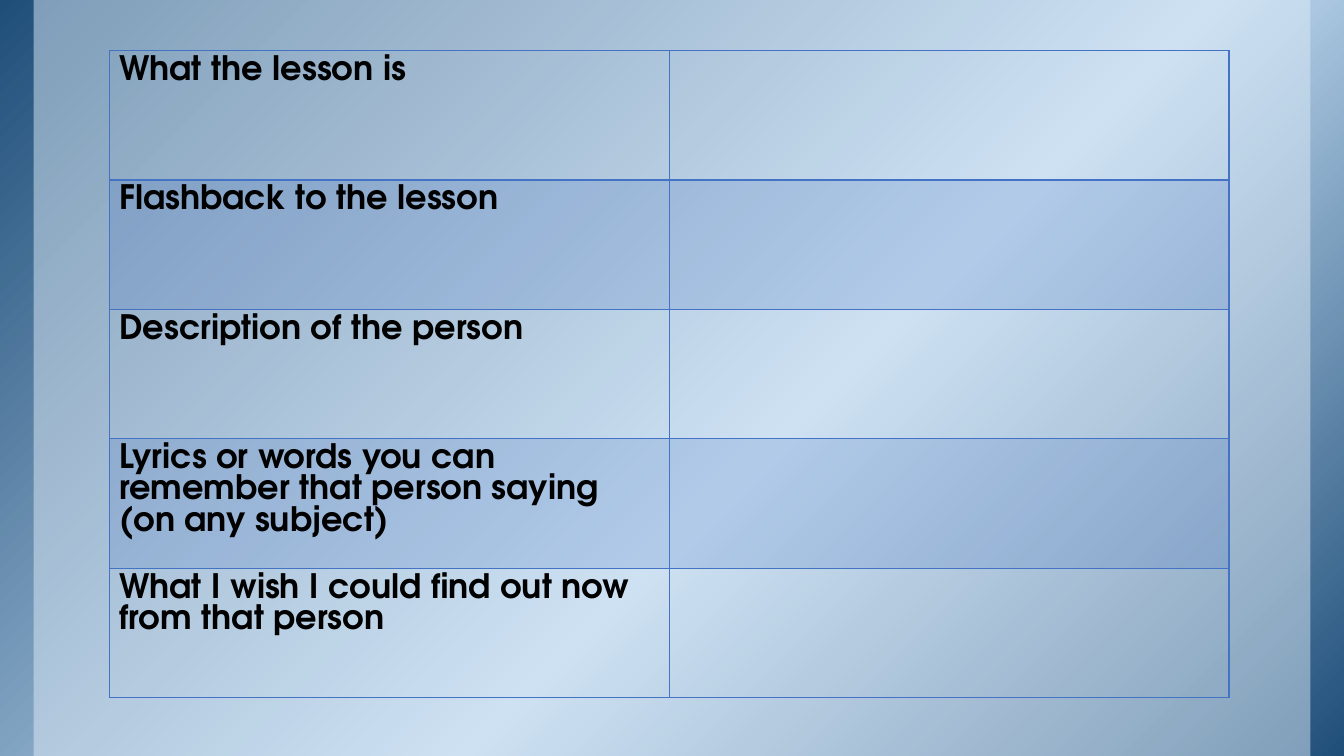
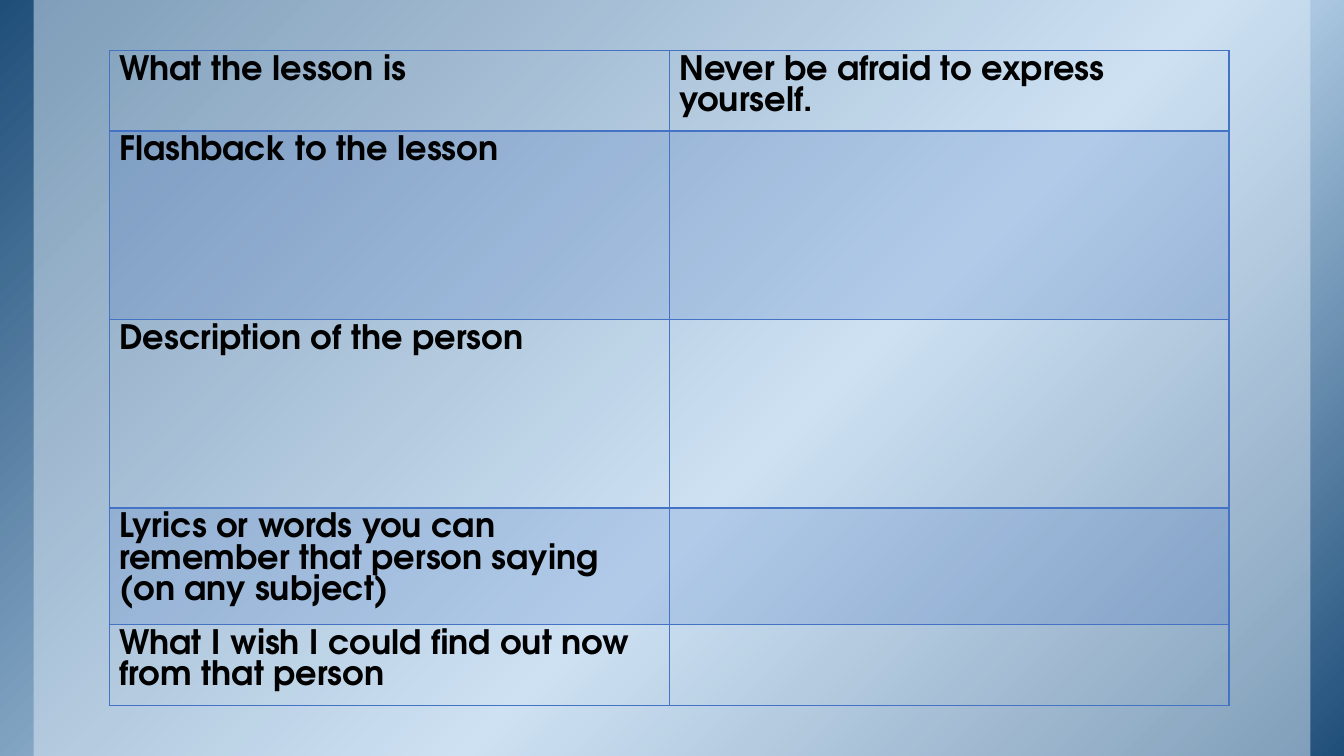
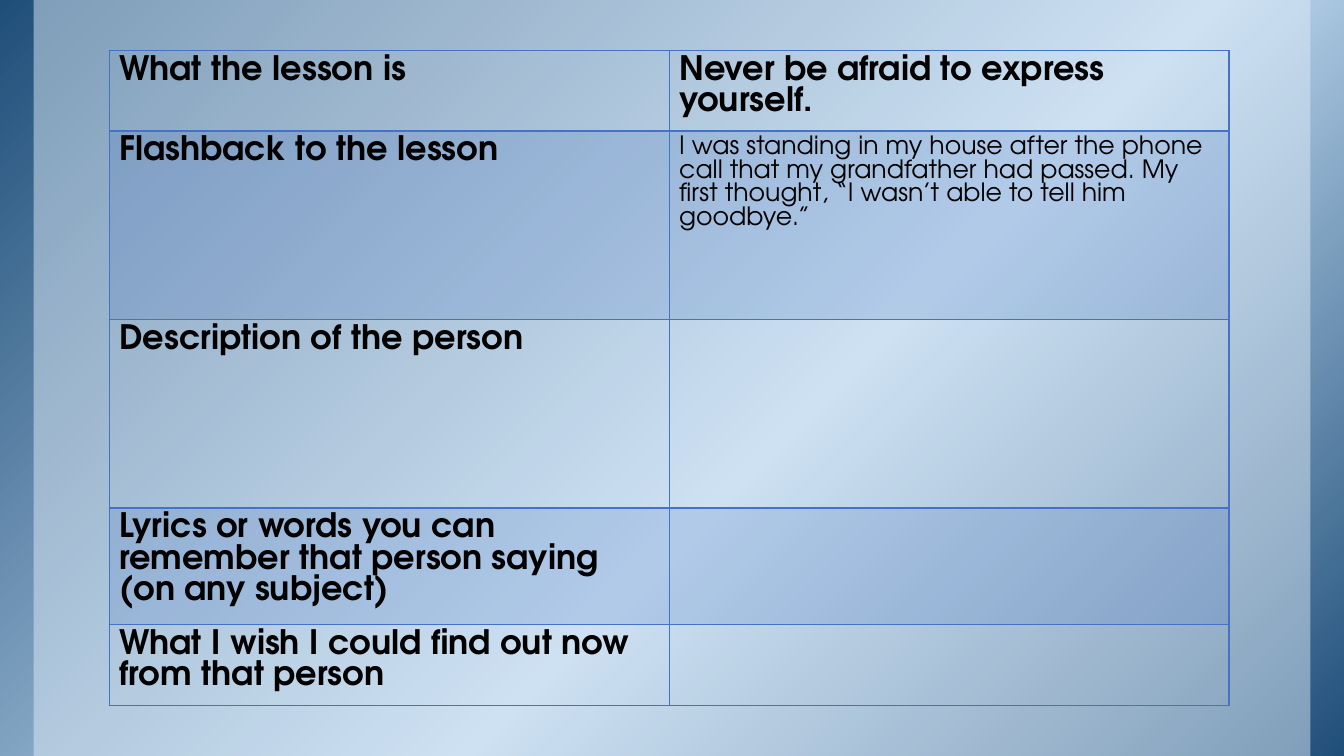
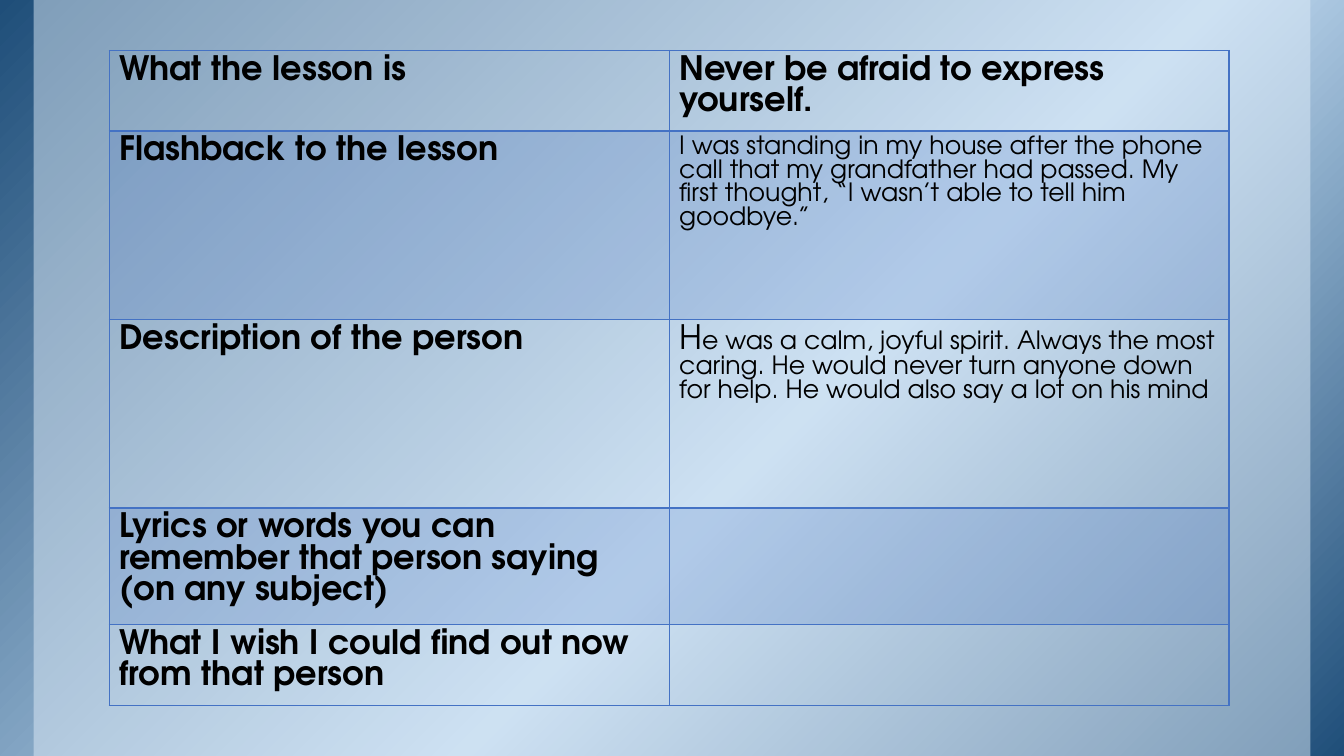
from copy import deepcopy
from dataclasses import dataclass

from lxml.etree import SubElement as Sub
from pptx import Presentation
from pptx.dml.color import RGBColor as Rgb
from pptx.enum.shapes import MSO_SHAPE as Shape
from pptx.oxml.ns import qn
from pptx.util import Inches, Pt


@dataclass(frozen=True)
class Theme:
    font: str = "TeX Gyre Adventor"
    head: int = 24
    body: int = 18
    ink: str = "000000"
    deep: str = "1F4E79"
    sky: str = "BDD7EE"
    pale: str = "DEEBF7"
    line: str = "4472C4"
    thin: int = 1
    thick: int = 2
    veil: int = 50   # opacity of the centre panel, percent
    tint: int = 20   # opacity of the shaded rows, percent


class Deck:
    """Holds the theme and the current slide; lengths are grid columns and rows."""
    COLS, ROWS = 40, 15

    def __init__(self, theme):
        self.theme = theme
        self.prs = Presentation()
        self.prs.slide_width = Inches(13.333)
        self.prs.slide_height = Inches(7.5)
        self.blank = self.prs.slide_layouts[6]
        self.slide = None

    def x(self, cols):
        return round(self.prs.slide_width * cols / self.COLS)

    def y(self, rows):
        return round(self.prs.slide_height * rows / self.ROWS)

    def page(self):
        self.slide = self.prs.slides.add_slide(self.blank)

    # Fills
    def wash(self, fill, color, alpha):
        fill.solid()
        fill.fore_color.rgb = Rgb.from_string(color)
        node = fill._xPr.find(qn("a:solidFill"))[0]
        Sub(node, qn("a:alpha"), val=str(alpha * 1000))

    def blend(self, fill, stops, angle):
        fill.gradient()
        fill.gradient_angle = 360 - angle
        nodes = fill._xPr.find(qn("a:gradFill")).find(qn("a:gsLst"))
        while len(nodes) < len(stops):
            nodes.append(deepcopy(nodes[0]))
        for stop, (place, color) in zip(fill.gradient_stops, stops):
            stop.position = place
            stop.color.rgb = Rgb.from_string(color)

    # Shapes
    def rect(self, left, top, width, height):
        box = self.slide.shapes.add_shape(
            Shape.RECTANGLE, self.x(left), self.y(top), self.x(width), self.y(height))
        box.shadow.inherit = False
        box.line.fill.background()
        return box

    def share(self, *boxes):
        """Move shapes to the blank layout, so that every slide shows them."""
        for box in boxes:
            self.blank.shapes._spTree.append(box._element)

    def frame(self):
        t = self.theme
        back = self.rect(0, 0, self.COLS, self.ROWS)
        self.blend(back.fill, [(0, t.deep), (0.58, t.sky), (1, t.deep)], 45)
        panel = self.rect(1, 0, self.COLS - 2, self.ROWS)
        self.wash(panel.fill, t.pale, t.veil)
        self.share(back, panel)

    # Table
    def edge(self, cell, side, width):
        props = cell._tc.get_or_add_tcPr()
        line = Sub(props, qn(f"a:ln{side}"), w=str(Pt(width)))
        Sub(Sub(line, qn("a:solidFill")), qn("a:srgbClr"), val=self.theme.line)

    def runs(self, cell, parts):
        para = cell.text_frame.paragraphs[0]
        for text, size, bold in parts:
            run = para.add_run()
            run.text = text
            font = run.font
            font.name, font.size, font.bold = self.theme.font, Pt(size), bold
            font.color.rgb = Rgb.from_string(self.theme.ink)

    def table(self, left, top, width, highs, rows):
        t = self.theme
        count = len(rows[0])
        grid = self.slide.shapes.add_table(
            len(rows), count, self.x(left), self.y(top),
            self.x(width), self.y(sum(highs))).table
        grid.first_row = grid.horz_banding = False
        for col in grid.columns:
            col.width = self.x(width / count)
        for i, (high, row) in enumerate(zip(highs, rows)):
            grid.rows[i].height = self.y(high)
            for j, parts in enumerate(row):
                cell = grid.cell(i, j)
                for side in "LRTB":
                    under = i == 0 and side == "B"
                    self.edge(cell, side, t.thick if under else t.thin)
                if i % 2:
                    self.wash(cell.fill, t.line, t.tint)
                else:
                    cell.fill.background()
                self.runs(cell, parts)


def main():
    theme = Theme()
    deck = Deck(theme)

    # Wording
    asks = [
        "What the lesson is",
        "Flashback to the lesson",
        "Description of the person",
        "Lyrics or words you can remember that person saying (on any subject)",
        "What I wish I could find out now from that person",
    ]
    replies = [
        [("Never be afraid to express yourself.", theme.head, True)],
        [("I was standing in my house after the phone call that my grandfather "
          "had passed. My first thought, “I wasn’t able to tell him goodbye.”",
          theme.body, False)],
        [("H", theme.head, False),
         ("e was a calm, joyful spirit. Always the most caring. He would never "
          "turn anyone down for help. He would also say a lot on his mind",
          theme.body, False)],
    ]
    even = [2.57] * len(asks)
    fitted = [1.6, 3.74, 3.74, 2.32, 1.6]

    # Each slide shows one more reply
    for shown in range(len(replies) + 1):
        deck.page()
        if shown == 0:
            deck.frame()
        rows = [([(ask, theme.head, True)], replies[i] if i < shown else [])
                for i, ask in enumerate(asks)]
        deck.table(3.25, 1, 33.33, fitted if shown else even, rows)

    deck.prs.save("out.pptx")


if __name__ == "__main__":
    main()
